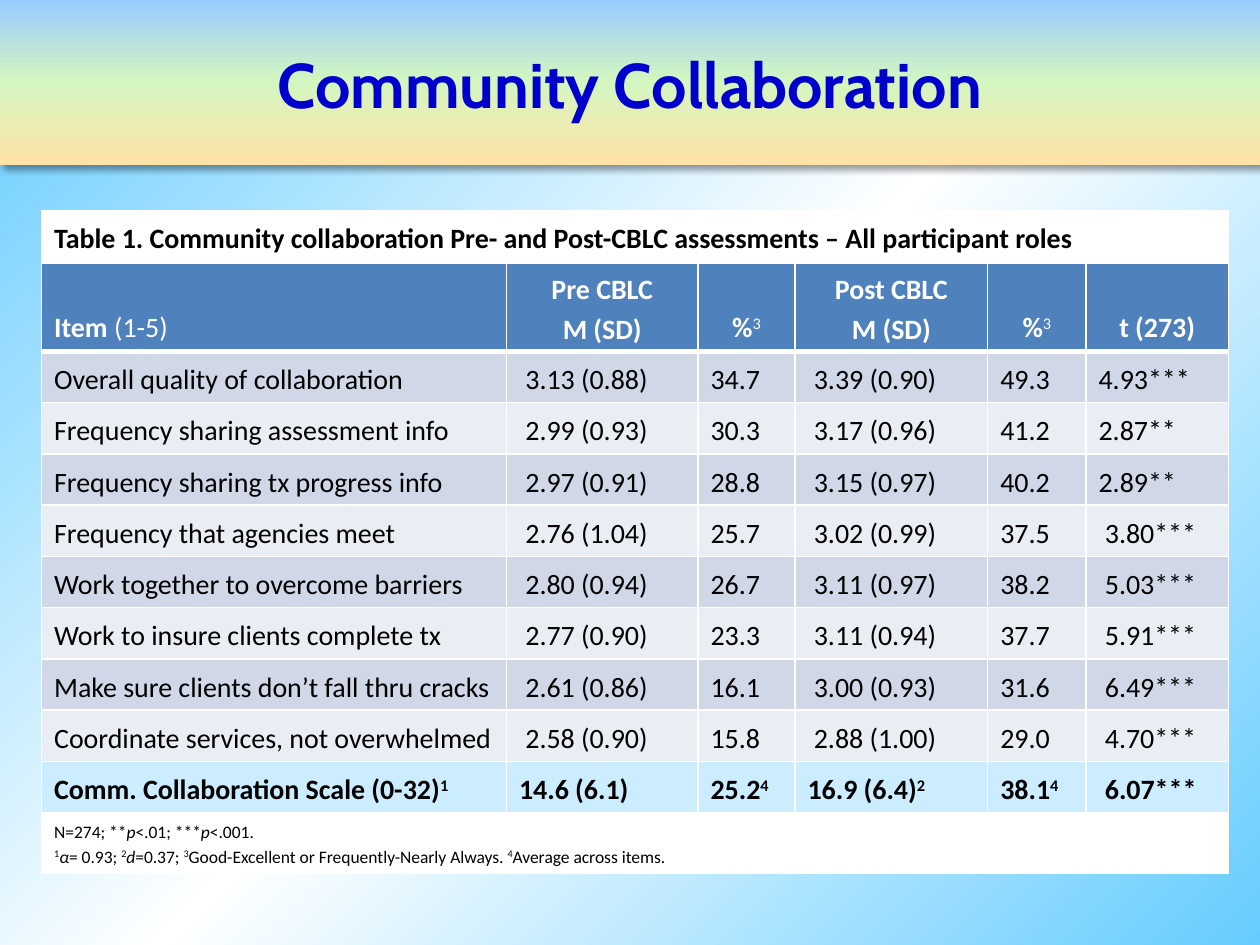
from copy import deepcopy

from lxml import etree
from pptx import Presentation
from pptx.dml.color import RGBColor
from pptx.enum.shapes import MSO_SHAPE
from pptx.enum.text import MSO_ANCHOR, PP_ALIGN
from pptx.oxml.ns import qn
from pptx.util import Inches, Pt

RECTANGLE = MSO_SHAPE.RECTANGLE
LEFT, CENTER = PP_ALIGN.LEFT, PP_ALIGN.CENTER
MIDDLE, BOTTOM = MSO_ANCHOR.MIDDLE, MSO_ANCHOR.BOTTOM

WHITE, BLACK = "FFFFFF", "000000"
HEADER_BLUE, SCALE_BLUE = "4F81BD", "CCECFF"
BANDS = ("D0D8E8", "E9EDF4")

# Pieces of a text are split by "|"; leading marks: ^ superscript, _ italic, ~ not bold.
MARKS = "^_~"
CAPTION = ("Table 1. Community collaboration Pre- and Post-CBLC assessments"
           " – All participant roles")
HEADINGS = ("Item|~ (1-5)", "Pre CBLC\nM (SD)", "%|^~3",
            "Post CBLC\nM (SD)", "%|^~3", "t (273)")
ITEMS = (
    ("Overall quality of collaboration", " 3.13 (0.88)", "34.7", " 3.39 (0.90)", "49.3", "4.93***"),
    ("Frequency sharing assessment info", " 2.99 (0.93)", "30.3", " 3.17 (0.96)", "41.2", "2.87**"),
    ("Frequency sharing tx progress info", " 2.97 (0.91)", "28.8", " 3.15 (0.97)", "40.2", "2.89**"),
    ("Frequency that agencies meet", " 2.76 (1.04)", "25.7", " 3.02 (0.99)", "37.5", " 3.80***"),
    ("Work together to overcome barriers", " 2.80 (0.94)", "26.7", " 3.11 (0.97)", "38.2", " 5.03***"),
    ("Work to insure clients complete tx", " 2.77 (0.90)", "23.3", " 3.11 (0.94)", "37.7", " 5.91***"),
    ("Make sure clients don’t fall thru cracks", " 2.61 (0.86)", "16.1", " 3.00 (0.93)", "31.6", " 6.49***"),
    ("Coordinate services, not overwhelmed", " 2.58 (0.90)", "15.8", " 2.88 (1.00)", "29.0", " 4.70***"),
)
SCALE = ("Comm. Collaboration Scale (0-32)|^1", "14.6 (6.1)", "25.2|^4",
         "16.9 (6.4)|^2", "38.1|^4", " 6.07***")
FOOTNOTE = ("N=274; **|_p|<.01; ***|_p|<.001.\n"
            "^1|_α|= 0.93; |^2|_d|=0.37; |^3|Good-Excellent or Frequently-Nearly Always. "
            "|^4|Average across items.")
COLUMN_WIDTHS = (3.69, 1.52, 0.77, 1.53, 0.78, 1.13)
ROW_HEIGHTS = (0.32, 0.55) + (0.4,) * 9 + (0.48,)


def rgb(hex_color):
    return RGBColor.from_string(hex_color)


class SlideBuilder:
    title_font, body_font = "Cabin", "Calibri"
    line_spacing = 1.15

    def __init__(self, slide):
        self.slide = slide

    def gradient(self, fill, owner, colors, clockwise_angle):
        """Spread the colours evenly over the gradient fill of the owner element."""
        fill.gradient()
        fill.gradient_angle = (360 - clockwise_angle) % 360
        stops = next(owner.iter(qn("a:gsLst")))
        while len(stops) < len(colors):
            stops.append(deepcopy(stops[0]))
        for i, (stop, color) in enumerate(zip(fill.gradient_stops, colors)):
            stop.position = i / (len(colors) - 1)
            stop.color.rgb = rgb(color)

    def background(self, colors, angle):
        self.gradient(self.slide.background.fill, self.slide.element, colors, angle)

    def banner(self, left, top, width, height, colors, angle):
        banner = self.slide.shapes.add_shape(
            RECTANGLE, Inches(left), Inches(top), Inches(width), Inches(height))
        self.gradient(banner.fill, banner.element, colors, angle)
        banner.line.fill.background()
        banner.shadow.inherit = False
        effects = next(banner.element.iter(qn("a:effectLst")))
        shadow = etree.SubElement(effects, qn("a:outerShdw"), blurRad=str(Pt(4)),
                                  dist=str(Pt(3)), dir="2700000", algn="tl", rotWithShape="0")
        shadow_color = etree.SubElement(shadow, qn("a:srgbClr"), val=BLACK)
        etree.SubElement(shadow_color, qn("a:alpha"), val="40000")

    def title(self, left, top, width, height, text, size, color):
        frame = self.slide.shapes.add_textbox(
            Inches(left), Inches(top), Inches(width), Inches(height)).text_frame
        frame.word_wrap = True
        frame.vertical_anchor = MIDDLE
        frame.text = text
        paragraph = frame.paragraphs[0]
        paragraph.alignment = CENTER
        self.style_run(paragraph.runs[0], self.title_font, size, color, True)

    def style_run(self, run, font_name, size, color, bold):
        run.font.name = font_name
        run.font.size = Pt(size)
        run.font.color.rgb = rgb(color)
        run.font.bold = bold

    def table(self, left, top, widths, heights):
        table = self.slide.shapes.add_table(
            len(heights), len(widths), Inches(left), Inches(top),
            Inches(sum(widths)), Inches(sum(heights))).table
        table.first_row = table.horz_banding = False
        for column, width in zip(table.columns, widths):
            column.width = Inches(width)
        for row, height in zip(table.rows, heights):
            row.height = Inches(height)
        return table

    def borders(self, cell, top, bottom):
        for side, width in (("L", 1), ("R", 1), ("T", top), ("B", bottom)):
            line = etree.SubElement(cell._tc.get_or_add_tcPr(), qn(f"a:ln{side}"),
                                    w=str(Pt(width)))
            fill = etree.SubElement(line, qn("a:solidFill"))
            etree.SubElement(fill, qn("a:srgbClr"), val=WHITE)

    def row(self, table, index, texts, fill, color=BLACK, size=16, bold=False,
            centered=False, top=1, bottom=1):
        """Fill one row; a single text spans all the columns."""
        cells = list(table.rows[index].cells)
        for cell in cells:
            self.borders(cell, top, bottom)
            cell.fill.solid()
            cell.fill.fore_color.rgb = rgb(fill)
        if len(texts) == 1:
            cells[0].merge(cells[-1])
        for column, (cell, text) in enumerate(zip(cells, texts)):
            cell.vertical_anchor = BOTTOM
            self.cell_text(cell, text, size, color, bold,
                           CENTER if centered and column else LEFT)

    def cell_text(self, cell, text, size, color, bold, alignment):
        lines = text.split("\n")
        cell.text_frame.text = "\n".join("" for _ in lines)
        for paragraph, line in zip(cell.text_frame.paragraphs, lines):
            paragraph.alignment = alignment
            paragraph.line_spacing = self.line_spacing
            for piece in line.split("|"):
                run = paragraph.add_run()
                run.text = piece.lstrip(MARKS)
                marks = piece[:len(piece) - len(run.text)]
                self.style_run(run, self.body_font, size, color, bold and "~" not in marks)
                run.font.italic = "_" in marks
                if "^" in marks:
                    run.font._element.set("baseline", "30000")


def main():
    presentation = Presentation()
    presentation.slide_width, presentation.slide_height = Inches(10), Inches(7.5)
    builder = SlideBuilder(presentation.slides.add_slide(presentation.slide_layouts[6]))

    builder.background(("66CCFF", WHITE, "66CCFF"), 45)
    builder.banner(0, 0, 10, 1.31, ("FFE2A7", "D5F6C0", "99CCFF"), 270)
    builder.title(0.5, 0, 9, 1.33, "Community Collaboration", 36, "0000CC")

    results = builder.table(0.33, 1.67, COLUMN_WIDTHS, ROW_HEIGHTS)
    builder.row(results, 0, (CAPTION,), WHITE, bold=True, bottom=3)
    builder.row(results, 1, HEADINGS, HEADER_BLUE, color=WHITE, bold=True,
                centered=True, top=3, bottom=3)
    for i, item in enumerate(ITEMS):
        builder.row(results, i + 2, item, BANDS[i % 2], top=1 if i else 3)
    builder.row(results, len(ITEMS) + 2, SCALE, SCALE_BLUE, bold=True)
    builder.row(results, len(ITEMS) + 3, (FOOTNOTE,), WHITE, size=10)

    presentation.save("out.pptx")


if __name__ == "__main__":
    main()
